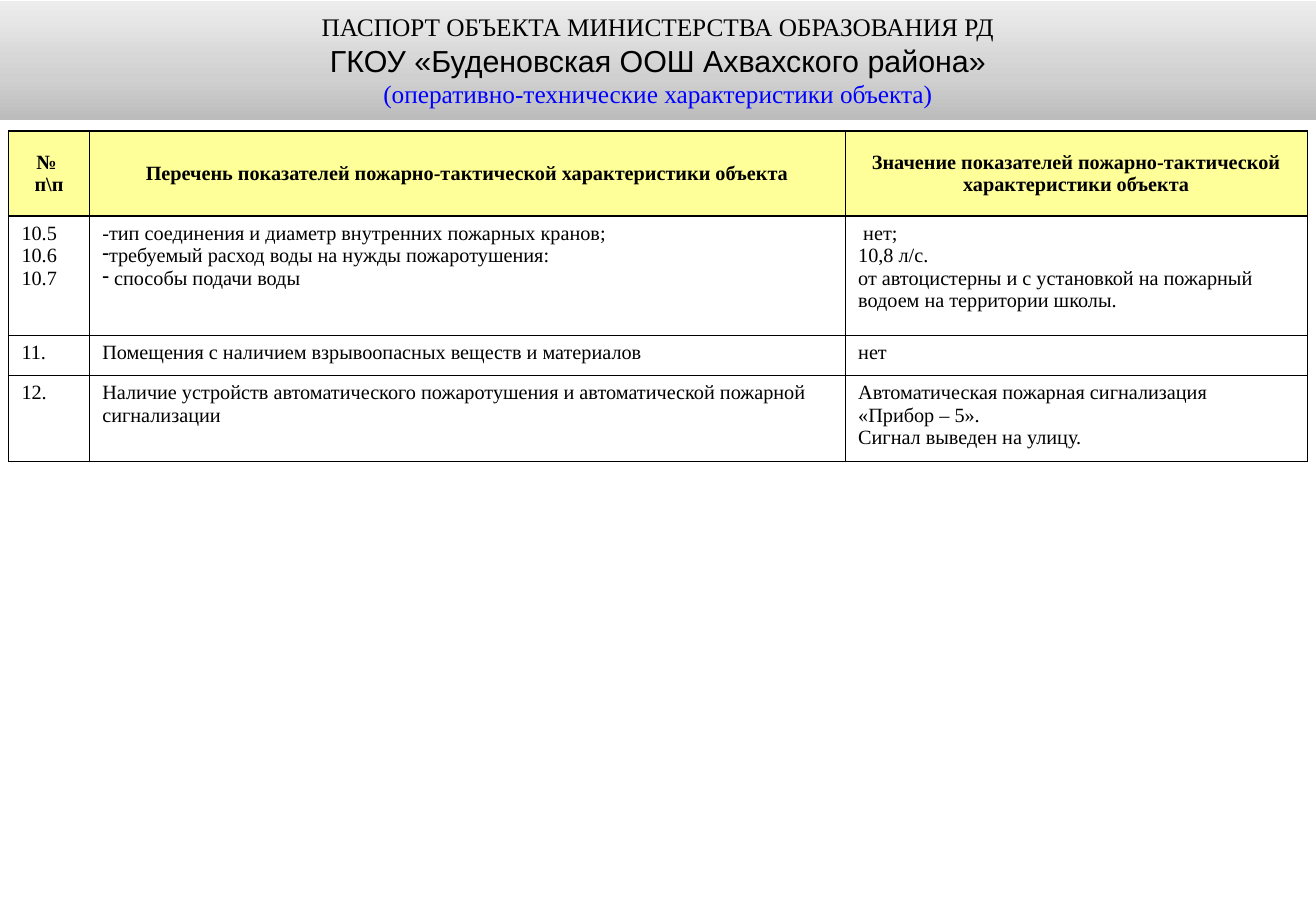
from copy import deepcopy

from pptx import Presentation
from pptx.dml.color import RGBColor
from pptx.enum.text import MSO_ANCHOR as Anchor, MSO_AUTO_SIZE as AutoSize, PP_ALIGN as Align
from pptx.oxml import parse_xml
from pptx.oxml.ns import nsdecls
from pptx.util import Cm, Pt

BLACK = RGBColor(0x00, 0x00, 0x00)
BLUE = RGBColor(0x00, 0x00, 0xFF)
WHITE = RGBColor(0xFF, 0xFF, 0xFF)
YELLOW = RGBColor(0xFF, 0xFF, 0x99)
BAND_STOPS = [
    (0, RGBColor(0xBC, 0xBC, 0xBC)),
    (0.35, RGBColor(0xD0, 0xD0, 0xD0)),
    (1, RGBColor(0xED, 0xED, 0xED)),
]
SERIF = "Times New Roman"

TITLE_LINES = [
    ("ПАСПОРТ ОБЪЕКТА МИНИСТЕРСТВА ОБРАЗОВАНИЯ РД", SERIF, 15, BLACK),
    ("ГКОУ «Буденовская ООШ Ахвахского района»", "Arial", 18, BLACK),
    ("(оперативно-технические характеристики объекта)", SERIF, 15, BLUE),
]
BULLET = "•"  # marks a paragraph that gets a dash bullet
COLUMN_WIDTHS = [1.69, 15.8, 9.66]
ROW_HEIGHTS = [1.78, 2.49, 0.84, 1.8]
ROWS = [
    [["№ ", "п\\п"],
     ["Перечень показателей пожарно-тактической характеристики объекта"],
     ["Значение показателей пожарно-тактической характеристики объекта"]],
    [["10.5", "10.6", "10.7"],
     ["-тип соединения и диаметр внутренних пожарных кранов;",
      BULLET + "требуемый расход воды на нужды пожаротушения:",
      BULLET + " способы подачи воды"],
     [" нет;", "10,8 л/с.",
      "от автоцистерны и с установкой на пожарный водоем на территории школы."]],
    [["11."], ["Помещения с наличием взрывоопасных веществ и материалов"], ["нет"]],
    [["12."],
     ["Наличие устройств автоматического пожаротушения и автоматической пожарной сигнализации"],
     ["Автоматическая пожарная сигнализация", "«Прибор – 5».", "Сигнал выведен на улицу."]],
]


def set_values(target, values):
    for name, value in values.items():
        setattr(target, name, value)


def write_paragraph(frame, index, text, align, color, **font):
    para = frame.paragraphs[0] if index == 0 else frame.add_paragraph()
    para.alignment = align
    span = para.add_run()
    span.text = text
    set_values(span.font, font)
    span.font.color.rgb = color
    return para


def add_dash_bullet(para):
    properties = para._p.get_or_add_pPr()
    set_values(properties, {"marL": 0, "indent": 0})
    properties.append(parse_xml(f'<a:buChar {nsdecls("a")} char="-"/>'))


def fill_gradient(shape, stops, angle):
    shape.fill.gradient()
    shape.fill.gradient_angle = angle
    stop_list = shape.fill.gradient_stops[0]._gs.getparent()
    while len(stop_list) < len(stops):
        stop_list.append(deepcopy(stop_list[0]))
    for stop, (position, color) in zip(shape.fill.gradient_stops, stops):
        stop.position = position
        stop.color.rgb = color


def add_title_band(page, width):
    band = page.shapes.title
    set_values(band, {"left": 0, "top": Cm(0.02), "width": width, "height": Cm(2.48)})
    fill_gradient(band, BAND_STOPS, 90)
    frame = band.text_frame
    set_values(frame, {"word_wrap": True, "auto_size": AutoSize.NONE,
                       "vertical_anchor": Anchor.MIDDLE})
    for index, (text, font, size, color) in enumerate(TITLE_LINES):
        write_paragraph(frame, index, text, Align.CENTER, color, name=font, size=Pt(size))


def add_borders(cell):
    properties = cell._tc.get_or_add_tcPr()
    for position, side in enumerate(["lnL", "lnR", "lnT", "lnB"]):
        properties.insert(position, parse_xml(
            f'<a:{side} {nsdecls("a")} w="{Pt(1)}"><a:solidFill>'
            f'<a:srgbClr val="{BLACK}"/></a:solidFill></a:{side}>'))


def write_cell(cell, lines, is_header):
    set_values(cell, {
        "margin_left": Cm(0.27), "margin_right": Cm(0.27),
        "margin_top": Cm(0.13), "margin_bottom": Cm(0.13),
        "vertical_anchor": Anchor.MIDDLE if is_header else Anchor.TOP,
    })
    cell.fill.solid()
    cell.fill.fore_color.rgb = YELLOW if is_header else WHITE
    add_borders(cell)
    align = Align.CENTER if is_header else Align.LEFT
    for index, line in enumerate(lines):
        para = write_paragraph(cell.text_frame, index, line.removeprefix(BULLET), align, BLACK,
                               name=SERIF, size=Pt(12), bold=is_header)
        if line.startswith(BULLET):
            add_dash_bullet(para)


def add_indicator_table(page):
    table = page.shapes.add_table(
        len(ROWS), len(COLUMN_WIDTHS), Cm(0.18), Cm(2.74),
        Cm(sum(COLUMN_WIDTHS)), Cm(sum(ROW_HEIGHTS))).table
    table.horz_banding = False
    for column, width in zip(table.columns, COLUMN_WIDTHS):
        column.width = Cm(width)
    for row_index, (row, height) in enumerate(zip(table.rows, ROW_HEIGHTS)):
        row.height = Cm(height)
        for cell, lines in zip(row.cells, ROWS[row_index]):
            write_cell(cell, lines, row_index == 0)


def main():
    deck = Presentation()
    set_values(deck, {"slide_width": Cm(27.51), "slide_height": Cm(19.05)})
    page = deck.slides.add_slide(deck.slide_layouts[5])
    add_title_band(page, deck.slide_width)
    add_indicator_table(page)
    deck.save("out.pptx")


if __name__ == "__main__":
    main()
